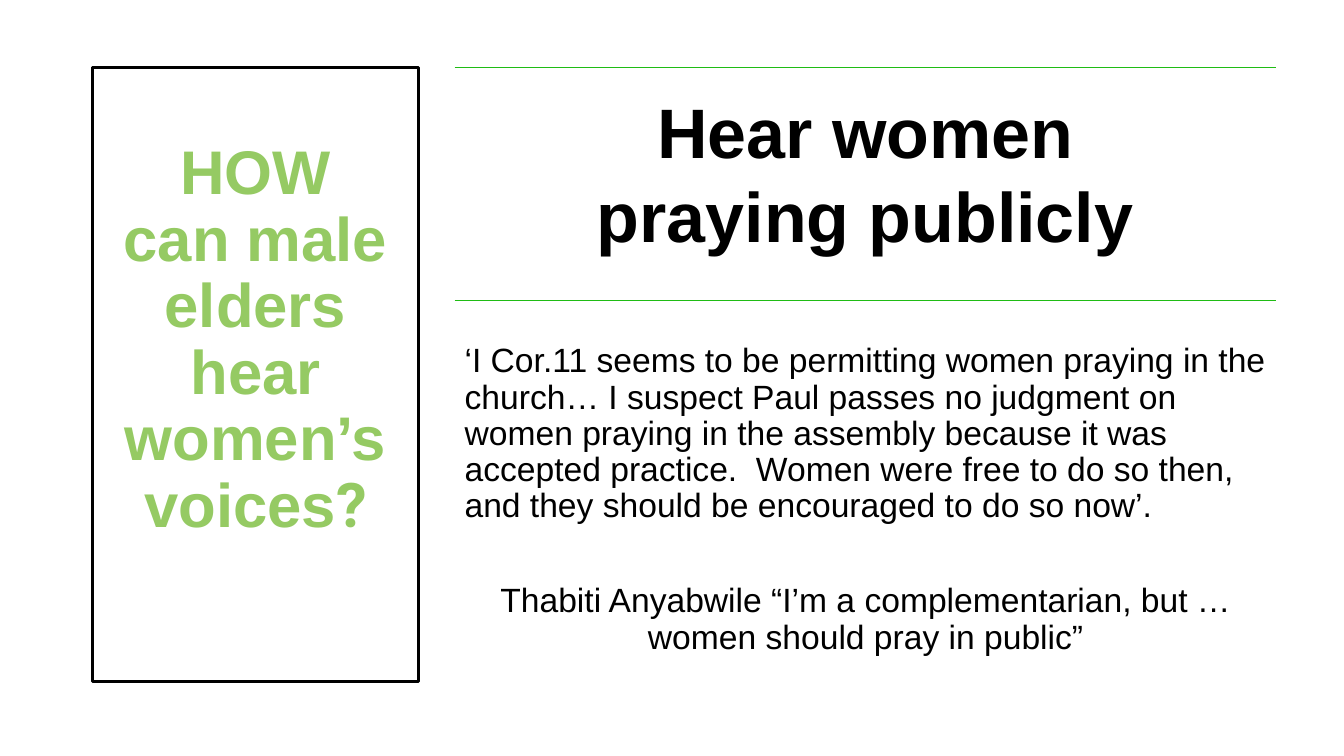
from pptx import Presentation
from pptx import util as u
from pptx.dml.color import RGBColor
from pptx.enum import shapes, text
from pptx.oxml import xmlchemy

BLACK, WHITE, RULE, QUESTION = "000000", "FFFFFF", "1FBC14", "95CA63"
LEFT, CENTER = text.PP_ALIGN.LEFT, text.PP_ALIGN.CENTER


def color(value):
    return RGBColor.from_string(value)


def set_frame(tf, insets, anchor=text.MSO_ANCHOR.TOP):
    """Wrap the text and set left, top, right and bottom insets in inches."""
    tf.word_wrap = True
    tf.vertical_anchor = anchor
    tf.margin_left, tf.margin_top, tf.margin_right, tf.margin_bottom = map(u.Inches, insets)


def add_run(p, content, size, fill=BLACK, bold=False, font="Arial"):
    r = p.add_run()
    r.text = content
    r.font.size, r.font.name, r.font.bold = u.Pt(size), font, bold
    r.font.color.rgb = color(fill)


def format_paragraph(p, align=LEFT, spacing=1.0, after=0):
    p.alignment, p.line_spacing, p.space_after = align, spacing, u.Pt(after)
    return p


def add_paragraphs(tf, items, **fmt):
    """Write (content, paragraph format) pairs with one run format."""
    for i, (content, layout) in enumerate(items):
        p = tf.add_paragraph() if i else tf.paragraphs[0]
        add_run(format_paragraph(p, **layout), content, **fmt)


def add_rule(s, left, top, width):
    line = s.shapes.add_connector(
        shapes.MSO_CONNECTOR.STRAIGHT, *map(u.Inches, (left, top, left + width, top)))
    line.line.color.rgb = color(RULE)
    line.line.width = u.Pt(1)
    line._element.spPr.append(xmlchemy.OxmlElement("a:effectLst"))


def add_question_panel(s, left, top, width, height):
    sp = s.shapes.add_shape(
        shapes.MSO_SHAPE.RECTANGLE, *map(u.Inches, (left, top, width, height)))
    sp.shadow.inherit = False
    sp.fill.background()
    sp.line.color.rgb = color(BLACK)
    sp.line.width = u.Pt(2.25)
    set_frame(sp.text_frame, (0.1, 0.05, 0.1, 0.71), text.MSO_ANCHOR.MIDDLE)
    p = format_paragraph(sp.text_frame.paragraphs[0], CENTER, 0.9)
    fmt = dict(size=44, fill=QUESTION, bold=True)
    add_run(p, "HOW", **fmt)
    p.add_line_break()
    add_run(p, "can male elders hear women’s voices", **fmt)
    add_run(p, "?", font="Roboto", **fmt)


def add_answer(s, left, top, width, height):
    """Place a ruled heading above a quotation and its source."""
    quote_top = top + 2.64
    second_rule = top + 2.31
    add_rule(s, left, top, width)
    add_rule(s, left, second_rule, width)

    heading = s.shapes.add_textbox(*map(u.Inches, (left, top, width, 1.79)))
    set_frame(heading.text_frame, (0.21,) * 4)
    add_paragraphs(heading.text_frame, [
        ("Hear women", dict(align=CENTER)),
        ("praying publicly", dict(align=CENTER)),
    ], size=50, bold=True)

    quote = s.shapes.add_textbox(
        *map(u.Inches, (left, quote_top, width, top + height - quote_top)))
    set_frame(quote.text_frame, (0.1,) * 4)
    add_paragraphs(quote.text_frame, [
        ("‘I Cor.11 seems to be permitting women praying in the church… I suspect "
         "Paul passes no judgment on women praying in the assembly because it was "
         "accepted practice.  Women were free to do so then, and they should be "
         "encouraged to do so now’.", dict(spacing=0.9, after=42)),
        ("Thabiti Anyabwile “I’m a complementarian, but …women should pray in public”",
         dict(align=CENTER, spacing=0.9)),
    ], size=24)


def main():
    prs = Presentation()
    prs.slide_width, prs.slide_height = u.Inches(13.33), u.Inches(7.5)
    s = prs.slides.add_slide(prs.slide_layouts[6])
    s.background.fill.solid()
    s.background.fill.fore_color.rgb = color(WHITE)
    top, height = 0.67, 6.09
    add_answer(s, 4.51, top, 8.15, height)
    add_question_panel(s, 0.92, top, 3.23, height)
    prs.save("out.pptx")


if __name__ == "__main__":
    main()
